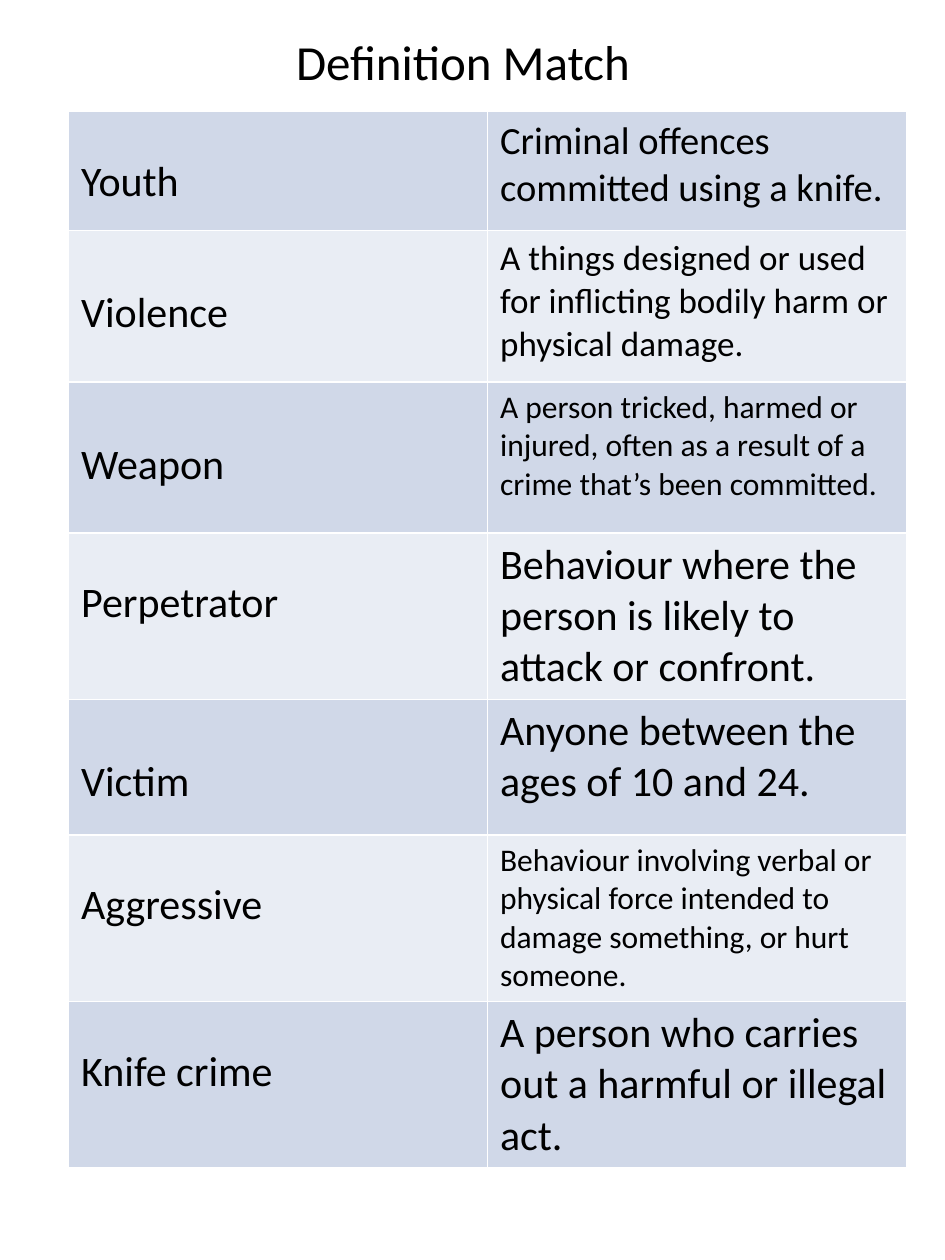
from lxml.etree import SubElement
from pptx import Presentation
from pptx.dml.color import RGBColor
from pptx.enum.text import MSO_ANCHOR as ANCHOR, MSO_AUTO_SIZE as AUTO, PP_ALIGN as ALIGN
from pptx.oxml.ns import qn
from pptx.util import Pt

COLORS = {"text": "000000", "dark_band": "D0D8E8", "light_band": "E9EDF4", "border": "FFFFFF"}
FONT = "Calibri"
LINE = 1.22  # line height relative to font size
MARGIN = 3.6

# Term, size of the line space above it, definition, definition size, row height
ROWS = [
    ("Youth", 18, "Criminal offences committed using a knife.", 22, 68.1),
    ("Violence", 24, "A things designed or used for inflicting bodily harm or physical damage.", 20, 86.4),
    ("Weapon", 24, "A person tricked, harmed or injured, often as a result of a crime that’s been committed.", 18, 86.4),
    ("Perpetrator", 18, "Behaviour where the person is likely to attack or confront.", 24, 86.4),
    ("Victim", 24, "Anyone between the ages of 10 and 24.", 24, 77.5),
    ("Aggressive", 18, "Behaviour involving verbal or physical force intended to damage something, or hurt someone.", 18, 86.4),
    ("Knife crime", 18, "A person who carries out a harmful or illegal act.", 24, 86.4),
]


def write_text(tf, text, size=24, color="text", align=ALIGN.LEFT):
    p = tf.paragraphs[0]
    p.alignment = align
    r = p.add_run()
    r.text = text
    r.font.name = FONT
    r.font.size = Pt(size)
    r.font.bold = False
    r.font.color.rgb = RGBColor.from_string(COLORS[color])


def add_title(slide, text):
    sp = slide.shapes.title
    sp.left, sp.top, sp.width, sp.height = Pt(162), Pt(14.4), Pt(208.8), Pt(41)
    tf = sp.text_frame
    tf.word_wrap = False
    tf.auto_size = AUTO.NONE
    tf.vertical_anchor = ANCHOR.TOP
    write_text(tf, text, size=28)


def set_borders(cell, color, width):
    tc_pr = cell._tc.get_or_add_tcPr()
    for side in ("a:lnL", "a:lnR", "a:lnT", "a:lnB"):
        ln = SubElement(tc_pr, qn(side), w=str(Pt(width)))
        fill = SubElement(ln, qn("a:solidFill"))
        SubElement(fill, qn("a:srgbClr"), val=COLORS[color])


def fill_cell(cell, text, band, size=24, space_above=0):
    set_borders(cell, "border", 1)
    cell.fill.solid()
    cell.fill.fore_color.rgb = RGBColor.from_string(COLORS[band])
    cell.margin_top = Pt(MARGIN + space_above * LINE)
    write_text(cell.text_frame, text, size=size)


def add_match_table(slide):
    height = sum(row[-1] for row in ROWS)
    frame = slide.shapes.add_table(len(ROWS), 2, Pt(39.2), Pt(63.7), Pt(478.8), Pt(height))
    table = frame.table
    table.first_row = table.horz_banding = False
    for i, (term, space, definition, size, row_height) in enumerate(ROWS):
        band = "light_band" if i % 2 else "dark_band"
        table.rows[i].height = Pt(row_height)
        fill_cell(table.cell(i, 0), term, band, space_above=space)
        fill_cell(table.cell(i, 1), definition, band, size=size)


def main():
    prs = Presentation()
    prs.slide_width, prs.slide_height = Pt(540), Pt(720)
    slide = prs.slides.add_slide(prs.slide_layouts[5])  # Title Only
    add_title(slide, "Definition Match")
    add_match_table(slide)
    prs.save("out.pptx")


if __name__ == "__main__":
    main()
